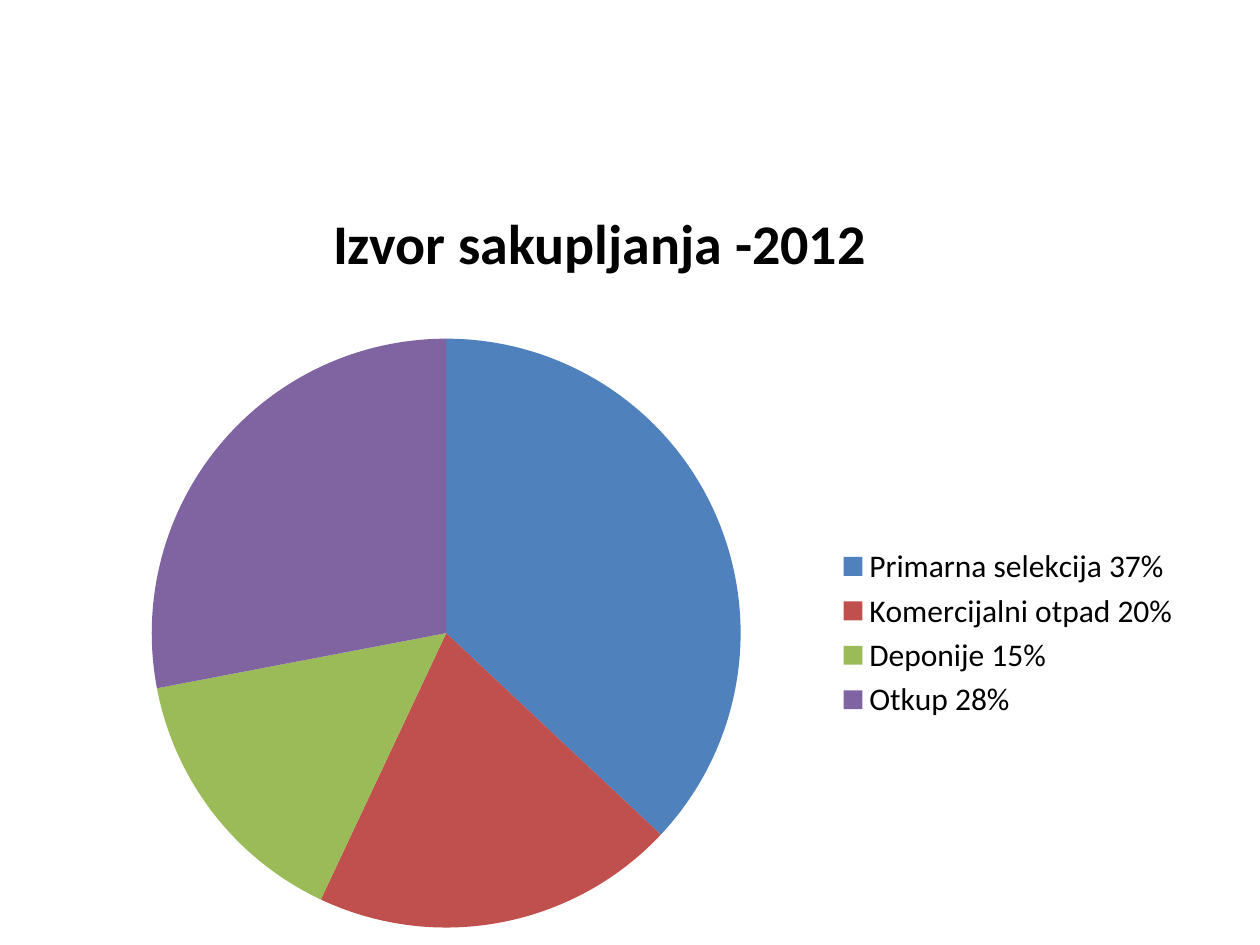
from pptx import Presentation
from pptx.chart.data import CategoryChartData
from pptx.dml.color import RGBColor
from pptx.enum.chart import XL_CHART_TYPE as ChartType, XL_LEGEND_POSITION as LegendPosition
from pptx.enum.text import MSO_ANCHOR as Anchor, PP_ALIGN as Align
from pptx.util import Pt

TITLE = "Izvor sakupljanja -2012 "
SERIES_NAME = "Series 1"
SOURCES = [
    ("Primarna selekcija 37%", 37, "blue"),
    ("Komercijalni otpad 20%", 20, "red"),
    ("Deponije 15%", 15, "green"),
    ("Otkup 28%", 28, "purple"),
]
COLORS = {
    "text": "000000",
    "blue": "4F81BD",
    "red": "C0504D",
    "green": "9BBB59",
    "purple": "8064A2",
}
TITLE_BOX = {"left": 39.6, "top": 73.44, "width": 613.44, "height": 129.6}
CHART_BOX = (33.84, 183.6, 648, 356.4)
TITLE_FONT = {"name": "Calibri", "size": Pt(32), "bold": True}
CHART_FONT = {"name": "Calibri", "size": Pt(18)}


def color(name):
    return RGBColor.from_string(COLORS[name])


def format_font(font, values):
    for name, value in values.items():
        setattr(font, name, value)
    font.color.rgb = color("text")


def add_title(slide):
    title = slide.shapes.title
    for name, value in TITLE_BOX.items():
        setattr(title, name, Pt(value))
    frame = title.text_frame
    frame.word_wrap = True
    frame.vertical_anchor = Anchor.MIDDLE
    para = frame.paragraphs[0]
    para.alignment = Align.CENTER
    span = para.add_run()
    span.text = TITLE
    format_font(span.font, TITLE_FONT)


def add_pie(slide):
    labels, values, fills = zip(*SOURCES)
    data = CategoryChartData()
    data.categories = labels
    data.add_series(SERIES_NAME, values)
    box = [Pt(length) for length in CHART_BOX]
    chart = slide.shapes.add_chart(ChartType.PIE, *box, data).chart
    format_font(chart.font, CHART_FONT)
    chart.has_title = False
    chart.has_legend = True
    chart.legend.position = LegendPosition.RIGHT
    chart.legend.include_in_layout = False
    plot = chart.plots[0]
    plot.vary_by_categories = True
    for index, name in enumerate(fills):
        fill = plot.series[0].points[index].format.fill
        fill.solid()
        fill.fore_color.rgb = color(name)


def main():
    deck = Presentation()
    deck.slide_width, deck.slide_height = Pt(720), Pt(540)
    slide = deck.slides.add_slide(deck.slide_layouts.get_by_name("Title Only"))
    add_title(slide)
    add_pie(slide)
    deck.save("out.pptx")


if __name__ == "__main__":
    main()
